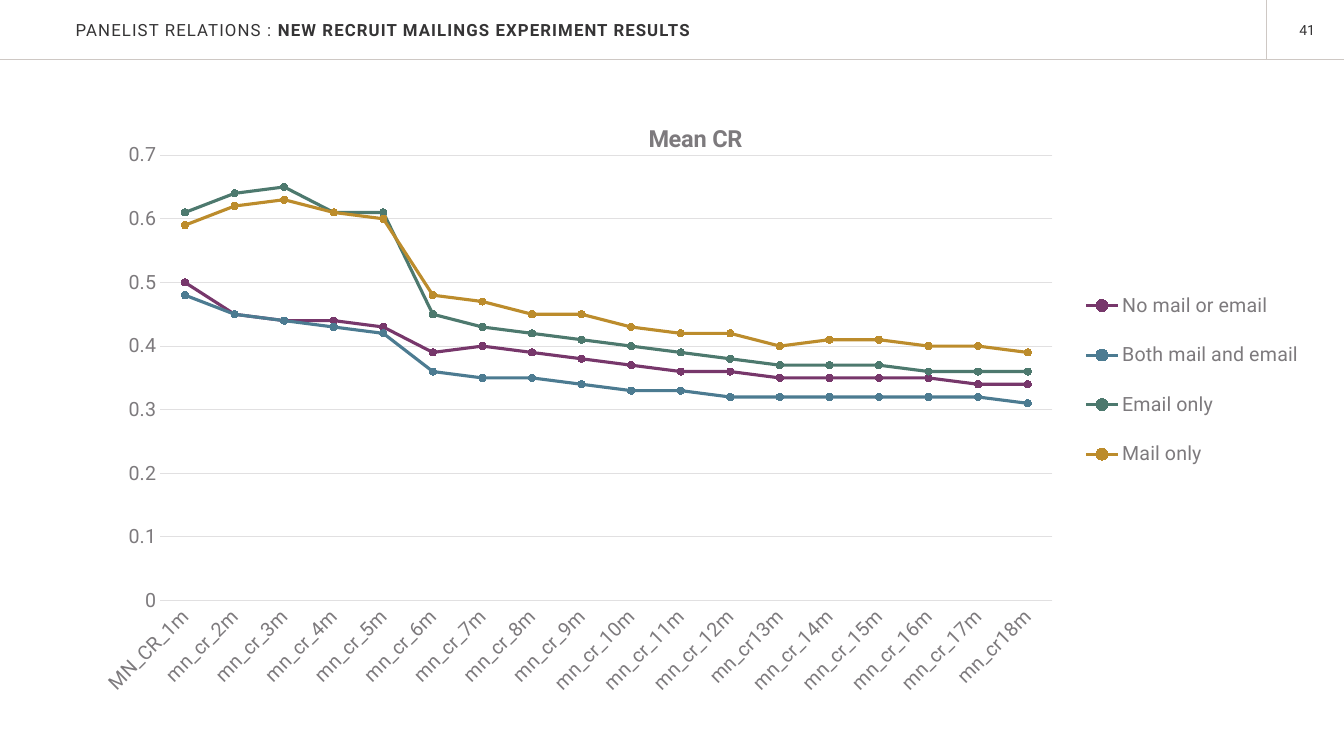
"""Build the slide with the mean completion rates of the new recruit mailings experiment."""
from pptx import Presentation
from pptx.chart.data import CategoryChartData
from pptx.dml.color import RGBColor
from pptx.enum.chart import XL_CHART_TYPE as ChartType, XL_LEGEND_POSITION as LegendSide
from pptx.enum.chart import XL_MARKER_STYLE as Marker, XL_TICK_MARK as Tick
from pptx.enum.shapes import MSO_CONNECTOR as Connector
from pptx.enum.text import MSO_ANCHOR as Anchor, PP_ALIGN as Align
from pptx.oxml.ns import qn
from pptx.util import Inches, Pt
from lxml.etree import SubElement

WIDTH, HEIGHT, HEADER = 13.33, 7.5, 0.59
CHART_WIDTH, CHART_HEIGHT = 12.41, 6.1
INK, GREY, GRID, RULE = "353435", "7D7A7D", "E1E0E1", "CEC8C4"

MONTHS = ["MN_CR_1m"] + [
    f"mn_cr{month}m" if month in (13, 18) else f"mn_cr_{month}m" for month in range(2, 19)
]
GROUPS = [
    ("No mail or email", "77376B",
     [0.5, 0.45, 0.44, 0.44, 0.43, 0.39, 0.4, 0.39, 0.38,
      0.37, 0.36, 0.36, 0.35, 0.35, 0.35, 0.35, 0.34, 0.34]),
    ("Both mail and email", "4C7B91",
     [0.48, 0.45, 0.44, 0.43, 0.42, 0.36, 0.35, 0.35, 0.34,
      0.33, 0.33, 0.32, 0.32, 0.32, 0.32, 0.32, 0.32, 0.31]),
    ("Email only", "4D796E",
     [0.61, 0.64, 0.65, 0.61, 0.61, 0.45, 0.43, 0.42, 0.41,
      0.4, 0.39, 0.38, 0.37, 0.37, 0.37, 0.36, 0.36, 0.36]),
    ("Mail only", "BC8C2C",
     [0.59, 0.62, 0.63, 0.61, 0.6, 0.48, 0.47, 0.45, 0.45,
      0.43, 0.42, 0.42, 0.4, 0.41, 0.41, 0.4, 0.4, 0.39]),
]


def color(value):
    return RGBColor.from_string(value)


def place(element, index, inner=False, **lengths):
    for old in element.findall(qn("c:layout")):
        element.remove(old)
    layout = SubElement(element, qn("c:layout"))
    element.insert(index, layout)
    manual = SubElement(layout, qn("c:manualLayout"))
    if inner:
        SubElement(manual, qn("c:layoutTarget")).set("val", "inner")
    for side in ("x", "y"):
        SubElement(manual, qn(f"c:{side}Mode")).set("val", "edge")
    for side, length in lengths.items():
        whole = CHART_WIDTH if side in ("x", "w") else CHART_HEIGHT
        SubElement(manual, qn(f"c:{side}")).set("val", f"{length / whole:.4f}")


class Page:
    def __init__(self, deck, font):
        self.slide = deck.slides.add_slide(deck.slide_layouts[5])
        self.font = font

    def style(self, font, size, value, bold=False):
        font.name, font.size, font.bold = self.font, Pt(size), bold
        font.color.rgb = color(value)

    def title(self, left, top, width, height, parts):
        box = self.slide.shapes.title
        box.left, box.top = Inches(left), Inches(top)
        box.width, box.height = Inches(width), Inches(height)
        frame = box.text_frame
        frame.margin_left = frame.margin_right = frame.margin_top = frame.margin_bottom = 0
        frame.vertical_anchor = Anchor.MIDDLE
        para = frame.paragraphs[0]
        para.alignment = Align.LEFT
        for text, bold in parts:
            span = para.add_run()
            span.text = text
            self.style(span.font, 12, INK, bold)
        for properties in box.element.iter(qn("a:rPr")):
            properties.set("spc", "80")

    def number(self, left, top, width, height, text):
        box = self.slide.shapes.add_textbox(
            Inches(left), Inches(top), Inches(width), Inches(height))
        box.text_frame.word_wrap = True
        para = box.text_frame.paragraphs[0]
        para.text, para.alignment = text, Align.RIGHT
        self.style(para.runs[0].font, 10, INK)

    def rule(self, *ends):
        line = self.slide.shapes.add_connector(Connector.STRAIGHT, *map(Inches, ends))
        line.line.color.rgb, line.line.width = color(RULE), Pt(0.65)
        SubElement(line.element.spPr, qn("a:effectLst"))

    def axis(self, axis):
        axis.major_tick_mark = axis.minor_tick_mark = Tick.NONE
        self.style(axis.tick_labels.font, 14, GREY)

    def chart(self, left, top, width, height, heading):
        data = CategoryChartData()
        data.categories = MONTHS
        for name, _, values in GROUPS:
            data.add_series(name, values)
        chart = self.slide.shapes.add_chart(
            ChartType.LINE_MARKERS, Inches(left), Inches(top),
            Inches(width), Inches(height), data).chart
        area = chart.element.find(qn("c:chart"))
        self.style(chart.font, 14, INK)
        chart.plots[0].vary_by_categories = False
        for series, (_, value, _) in zip(chart.plots[0].series, GROUPS):
            series.smooth = False
            series.format.line.color.rgb, series.format.line.width = color(value), Pt(2.25)
            series.marker.style, series.marker.size = Marker.CIRCLE, 5
            series.marker.format.fill.solid()
            series.marker.format.fill.fore_color.rgb = color(value)
            series.marker.format.line.color.rgb = color(value)

        months, rates = chart.category_axis, chart.value_axis
        self.axis(months)
        months.format.line.color.rgb, months.format.line.width = color(GRID), Pt(0.75)
        labels = next(area.iter(qn("c:catAx"))).find(qn("c:txPr"))
        labels.find(qn("a:bodyPr")).set("rot", "-2700000")
        self.axis(rates)
        rates.minimum_scale, rates.maximum_scale, rates.major_unit = 0, 0.7, 0.1
        rates.format.line.fill.background()
        grid = rates.major_gridlines.format.line
        grid.color.rgb, grid.width = color(GRID), Pt(0.75)

        chart.has_title = True
        para = chart.chart_title.text_frame.paragraphs[0]
        para.text = heading
        self.style(para.runs[0].font, 16.8, GREY, True)
        chart.has_legend = True
        chart.legend.position = LegendSide.RIGHT
        chart.legend.include_in_layout = False
        self.style(chart.legend.font, 14, GREY)

        place(area.find(qn("c:title")), 1, x=5.73, y=0.23)
        place(area.find(qn("c:legend")), 1, x=10.05, y=1.71, w=2.23, h=2.22)
        place(area.find(qn("c:plotArea")), 0, inner=True, x=0.93, y=0.59, w=8.85, h=4.42)


def main():
    deck = Presentation()
    deck.slide_width, deck.slide_height = Inches(WIDTH), Inches(HEIGHT)
    page = Page(deck, "Roboto")
    page.number(12.64, 0.16, 0.5, 0.27, "41")
    page.rule(0, HEADER, WIDTH, HEADER)
    page.rule(12.56, 0, 12.56, HEADER)
    page.title(0.75, 0, 9.3, 0.6, [
        ("PANELIST RELATIONS : ", False),
        ("NEW RECRUIT MAILINGS EXPERIMENT RESULTS", True),
    ])
    page.chart(0.66, 0.95, CHART_WIDTH, CHART_HEIGHT, "Mean CR")
    deck.save("out.pptx")


if __name__ == "__main__":
    main()
